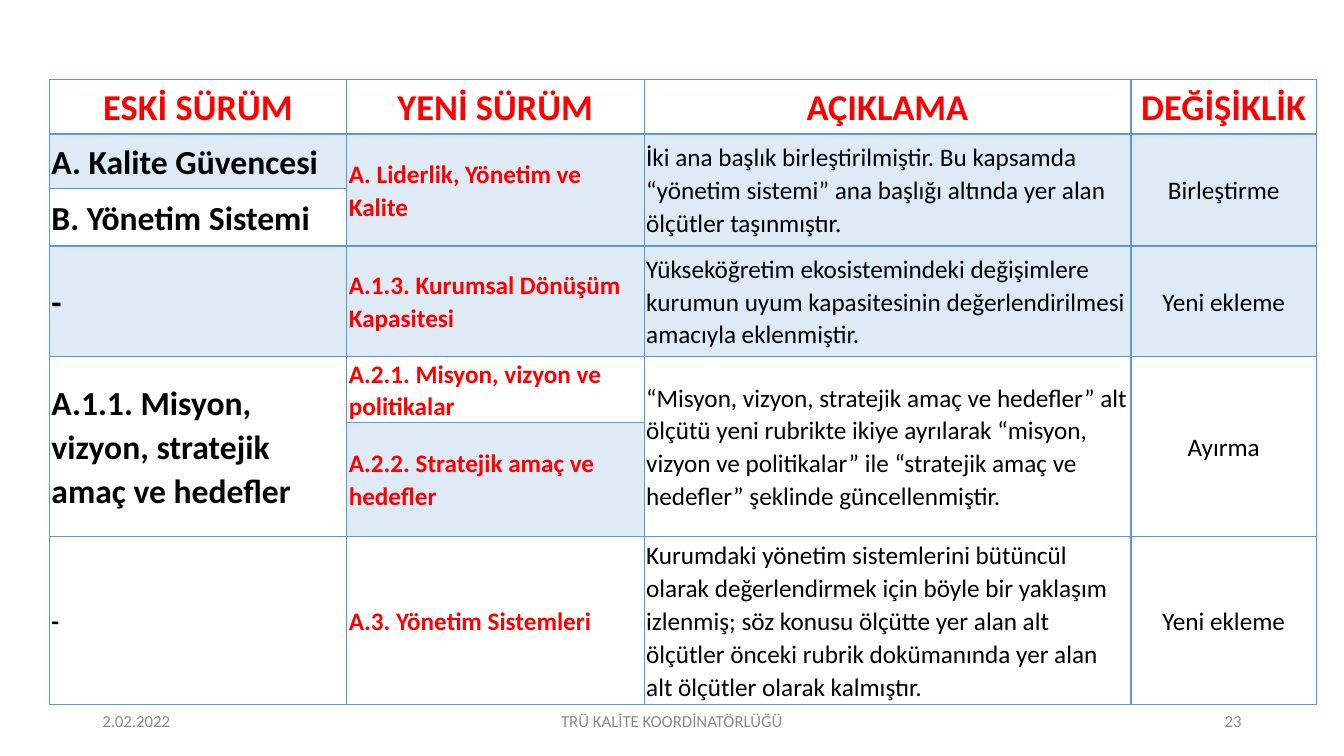
from lxml import etree
from pptx import Presentation
from pptx.dml.color import RGBColor
from pptx.enum import text
from pptx.oxml import ns
from pptx.util import Pt

COLORS = {"line": "5B9BD5", "red": "FF0000", "black": "000000", "grey": "8C8C8C"}
LEFT, CENTER, RIGHT = text.PP_ALIGN.LEFT, text.PP_ALIGN.CENTER, text.PP_ALIGN.RIGHT
FONT = "Calibri"
COLUMN_WIDTHS = [212.4, 212.4, 347.8, 132.5]
ROW_HEIGHTS = [38.9, 38.9, 41, 79.2, 46.8, 81.4, 120.2]
HEADER_STYLE = (26, "red", True, CENTER)
COLUMN_STYLES = [
    (24, "black", True, LEFT),
    (18, "red", True, LEFT),
    (18, "black", False, LEFT),
    (18, "black", False, CENTER),
]
ROWS = [
    ["ESKİ SÜRÜM", "YENİ SÜRÜM", "AÇIKLAMA", "DEĞİŞİKLİK"],
    ["A. Kalite Güvencesi", "A. Liderlik, Yönetim ve Kalite",
     "İki ana başlık birleştirilmiştir. Bu kapsamda “yönetim sistemi” ana başlığı "
     "altında yer alan ölçütler taşınmıştır.", "Birleştirme"],
    ["B. Yönetim Sistemi", None, None, None],
    ["-", "A.1.3. Kurumsal Dönüşüm Kapasitesi",
     "Yükseköğretim ekosistemindeki değişimlere kurumun uyum kapasitesinin "
     "değerlendirilmesi amacıyla eklenmiştir.", "Yeni ekleme"],
    ["A.1.1. Misyon, vizyon, stratejik amaç ve hedefler",
     "A.2.1. Misyon, vizyon ve politikalar",
     "“Misyon, vizyon, stratejik amaç ve hedefler” alt ölçütü yeni rubrikte ikiye "
     "ayrılarak “misyon, vizyon ve politikalar” ile “stratejik amaç ve hedefler” "
     "şeklinde güncellenmiştir.", "Ayırma"],
    [None, "A.2.2. Stratejik amaç ve hedefler", None, None],
    ["-", "A.3. Yönetim Sistemleri",
     "Kurumdaki yönetim sistemlerini bütüncül olarak değerlendirmek için böyle bir "
     "yaklaşım izlenmiş; söz konusu ölçütte yer alan alt ölçütler önceki rubrik "
     "dokümanında yer alan alt ölçütler olarak kalmıştır.", "Yeni ekleme"],
]
SHADED = {(1, c) for c in range(4)} | {(3, c) for c in range(4)} | {(5, 1)}


def write(tf, content, size, color, bold, align):
    """Write one formatted run into the first paragraph of a text frame."""
    p = tf.paragraphs[0]
    p.alignment = align
    r = p.add_run()
    r.text = content
    r.font.name, r.font.size, r.font.bold = FONT, Pt(size), bold
    r.font.color.rgb = RGBColor.from_string(COLORS[color])
    return p


def set_borders(cell, top, bottom):
    """Draw the four borders of a cell, with the given top and bottom widths."""
    tcPr = cell._tc.get_or_add_tcPr()
    for i, (side, width) in enumerate([("L", 1), ("R", 1), ("T", top), ("B", bottom)]):
        ln = etree.Element(ns.qn(f"a:ln{side}"), w=str(Pt(width)))
        fill = etree.SubElement(ln, ns.qn("a:solidFill"))
        etree.SubElement(fill, ns.qn("a:srgbClr"), val=COLORS["line"])
        tcPr.insert(i, ln)


def set_fill(cell, shaded):
    """Give a cell a translucent tint or no fill."""
    if not shaded:
        cell.fill.background()
        return
    cell.fill.solid()
    cell.fill.fore_color.rgb = RGBColor.from_string(COLORS["line"])
    color = cell._tc.tcPr.find(ns.qn("a:solidFill"))[0]
    etree.SubElement(color, ns.qn("a:alpha"), val="20000")


def add_comparison_table(s, x, y, w, h):
    """Add the table that compares the old and new versions."""
    frame = s.shapes.add_table(len(ROWS), len(COLUMN_WIDTHS), Pt(x), Pt(y), Pt(w), Pt(h))
    table = frame.table
    table.first_row = table.horz_banding = False
    for column, width in zip(table.columns, COLUMN_WIDTHS):
        column.width = Pt(width)
    for row, height in zip(table.rows, ROW_HEIGHTS):
        row.height = Pt(height)
    for i, row in enumerate(ROWS):
        for j, content in enumerate(row):
            cell = table.cell(i, j)
            cell.margin_left = cell.margin_right = Pt(1.5)
            cell.margin_top = cell.margin_bottom = 0
            cell.vertical_anchor = text.MSO_ANCHOR.MIDDLE
            set_fill(cell, (i, j) in SHADED)
            set_borders(cell, 2 if i == 1 else 1, 2 if i == 0 else 1)
            if content is None:
                table.cell(i - 1, j).merge(cell)
                continue
            size, color, bold, align = COLUMN_STYLES[j] if i else HEADER_STYLE
            if i == len(ROWS) - 1:
                size = 18
            write(cell.text_frame, content, size, color, bold, align).line_spacing = 1.07


def add_footer(s, x, y, w, h):
    """Add the date, the office name and the page number along a strip."""
    side, middle = 216, 324
    items = [
        ("2.02.2022", x, side, LEFT),
        ("TRÜ KALİTE KOORDİNATÖRLÜĞÜ", x + (w - middle) / 2, middle, CENTER),
        ("23", x + w - side, side, RIGHT),
    ]
    for content, left, width, align in items:
        tf = s.shapes.add_textbox(Pt(left), Pt(y), Pt(width), Pt(h)).text_frame
        tf.word_wrap = True
        tf.vertical_anchor = text.MSO_ANCHOR.MIDDLE
        write(tf, content, 12, "grey", False, align)


def main():
    """Build and save the slide."""
    prs = Presentation()
    prs.slide_width, prs.slide_height = Pt(960), Pt(540)
    s = prs.slides.add_slide(prs.slide_layouts[6])
    add_comparison_table(s, 35.3, 56.9, sum(COLUMN_WIDTHS), sum(ROW_HEIGHTS))
    add_footer(s, 66, 500.5, 828, 28.75)
    prs.save("out.pptx")


if __name__ == "__main__":
    main()
